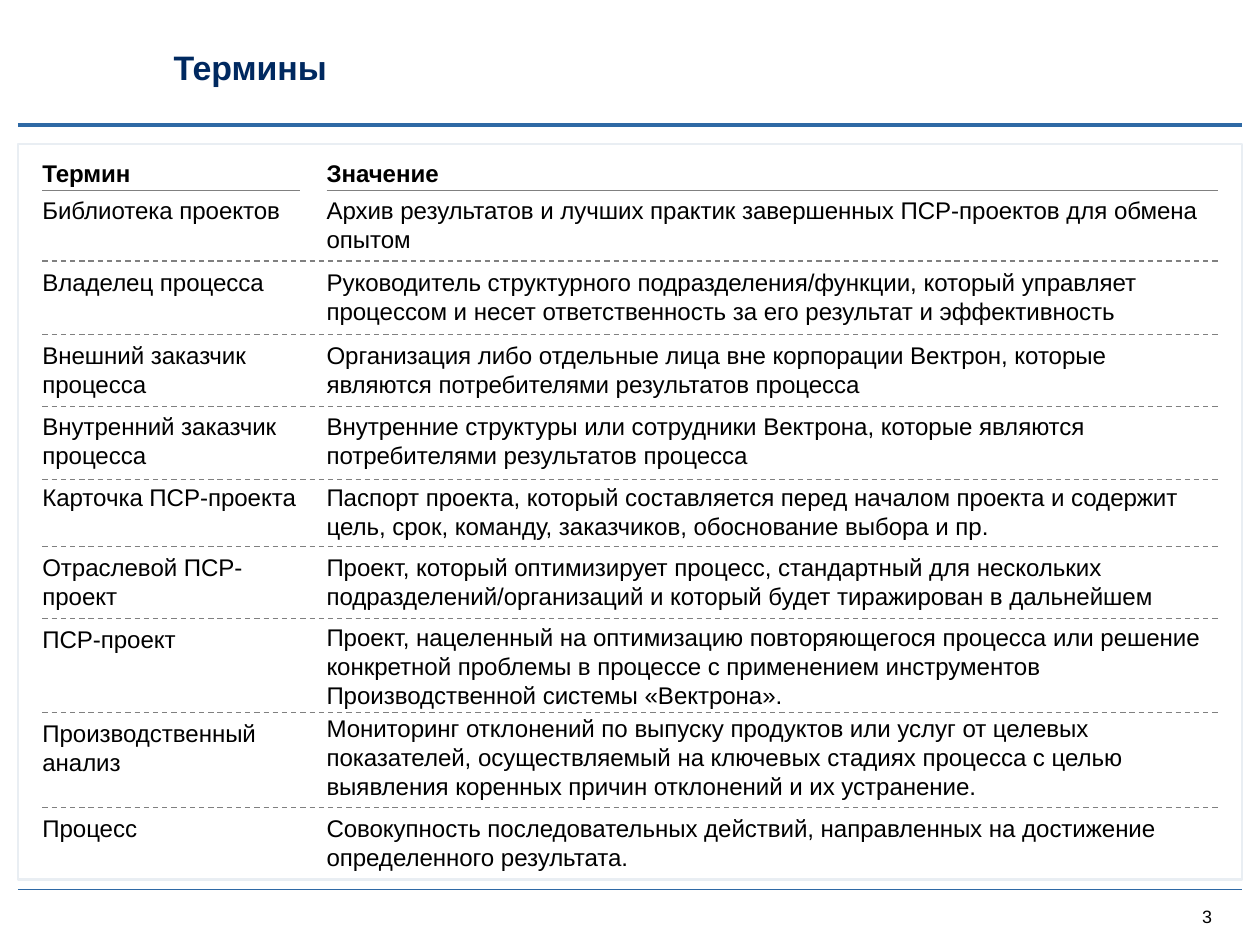
import dataclasses
import typing

import pptx
import pptx.dml.color
import pptx.enum.dml
import pptx.enum.shapes
import pptx.enum.text
import pptx.oxml
import pptx.oxml.ns
import pptx.util

Inches = pptx.util.Inches
Anchor = pptx.enum.text.MSO_ANCHOR


@dataclasses.dataclass(frozen=True)
class Theme:
    font: str = "Arial"
    title: str = "002960"
    text: str = "000000"
    accent: str = "2E69A5"
    frame: str = "E9EEF3"
    rule: str = "808080"
    title_size: float = 19
    body_size: float = 13.5
    number_size: float = 10
    thin: float = 0.75
    medium: float = 1.5
    thick: float = 2.25


class Row(typing.NamedTuple):
    """A glossary entry; the pads are the gaps in inches above its two texts."""
    height: float
    term: str
    meaning: str
    term_pad: float = 0.05
    meaning_pad: float = 0.05


THEME = Theme()
WIDTH, HEIGHT = 9.8, 7.35
MARGIN = 0.14
RIGHT = WIDTH - MARGIN
TERM_LEFT, TERM_WIDTH = 0.33, 2.0
MEANING_LEFT, MEANING_WIDTH = 2.54, 6.93
TABLE_RIGHT = MEANING_LEFT + MEANING_WIDTH
HEADER_TOP, HEADER_HEIGHT = 1.22, 0.26

COLUMNS = [("Термин", TERM_LEFT, TERM_WIDTH), ("Значение", MEANING_LEFT, MEANING_WIDTH)]
ROWS = [
    Row(0.55, "Библиотека проектов",
        "Архив результатов и лучших практик завершенных ПСР-проектов для обмена опытом",
        0.04, 0.04),
    Row(0.57, "Владелец процесса",
        "Руководитель структурного подразделения/функции, который управляет процессом "
        "и несет ответственность за его результат и эффективность"),
    Row(0.56, "Внешний заказчик процесса",
        "Организация либо отдельные лица вне корпорации Вектрон, которые являются "
        "потребителями результатов процесса"),
    Row(0.57, "Внутренний заказчик процесса",
        "Внутренние структуры или сотрудники Вектрона, которые являются "
        "потребителями результатов процесса", 0.04, 0.04),
    Row(0.52, "Карточка ПСР-проекта",
        "Паспорт проекта, который составляется перед началом проекта и содержит "
        "цель, срок, команду, заказчиков, обоснование выбора и пр.", 0.02, 0.02),
    Row(0.56, "Отраслевой ПСР-проект",
        "Проект, который оптимизирует процесс, стандартный для нескольких "
        "подразделений/организаций и который будет тиражирован в дальнейшем"),
    Row(0.73, "ПСР-проект",
        "Проект, нацеленный на оптимизацию повторяющегося процесса или решение "
        "конкретной проблемы в процессе с применением инструментов "
        "Производственной системы «Вектрона».", 0.05, 0.03),
    Row(0.74, "Производственный анализ",
        "Мониторинг отклонений по выпуску продуктов или услуг от целевых "
        "показателей, осуществляемый на ключевых стадиях процесса с целью "
        "выявления коренных причин отклонений и их устранение.", 0.05, 0.01),
    Row(0.56, "Процесс",
        "Совокупность последовательных действий, направленных на достижение "
        "определенного результата."),
]


def rgb(color):
    return pptx.dml.color.RGBColor.from_string(color)


def add_text(slide, text, left, top, width, height, size=THEME.body_size,
             color=THEME.text, bold=False, anchor=Anchor.TOP, bottom=0, wrap=True):
    tf = slide.shapes.add_textbox(*map(Inches, (left, top, width, height))).text_frame
    tf.margin_left = tf.margin_right = tf.margin_top = 0
    tf.margin_bottom = Inches(bottom)
    tf.word_wrap = wrap
    tf.vertical_anchor = anchor
    tf.text = text
    font = tf.paragraphs[0].runs[0].font
    font.name, font.size, font.bold = THEME.font, pptx.util.Pt(size), bold
    font.color.rgb = rgb(color)


def add_rule(slide, left, right, y, color=THEME.rule, weight=THEME.thin, dashed=False):
    """Draw a horizontal line."""
    sp = slide.shapes.add_connector(
        pptx.enum.shapes.MSO_CONNECTOR.STRAIGHT, *map(Inches, (left, y, right, y)))
    sp.line.color.rgb = rgb(color)
    sp.line.width = pptx.util.Pt(weight)
    if dashed:
        sp.line.dash_style = pptx.enum.dml.MSO_LINE.DASH
    effects = pptx.oxml.ns.qn("a:effectLst")
    sp.line._get_or_add_ln().addnext(sp._element.makeelement(effects, {}))


def add_frame(slide, left, top, width, height):
    sp = slide.shapes.add_shape(
        pptx.enum.shapes.MSO_SHAPE.RECTANGLE, *map(Inches, (left, top, width, height)))
    sp.shadow.inherit = False
    sp.fill.background()
    sp.line.color.rgb = rgb(THEME.frame)
    sp.line.width = pptx.util.Pt(THEME.medium)


def add_glossary(slide):
    y = HEADER_TOP + HEADER_HEIGHT
    for name, left, width in COLUMNS:
        add_rule(slide, left, left + width, y)
        add_text(slide, name, left, HEADER_TOP, width, HEADER_HEIGHT,
                 bold=True, anchor=Anchor.BOTTOM, bottom=0.02)
    for i, row in enumerate(ROWS):
        if i:
            add_rule(slide, TERM_LEFT, TABLE_RIGHT, y, dashed=True)
        cells = zip(COLUMNS, (row.term, row.meaning), (row.term_pad, row.meaning_pad))
        for (_, left, width), text, pad in cells:
            add_text(slide, text, left, y + pad, width, row.height - pad)
        y += row.height


def main():
    prs = pptx.Presentation()
    prs.slide_width, prs.slide_height = Inches(WIDTH), Inches(HEIGHT)
    slide = prs.slides.add_slide(prs.slide_layouts[6])
    add_rule(slide, MARGIN, RIGHT, 6.92, THEME.accent)
    add_rule(slide, MARGIN, RIGHT, 0.97, THEME.accent, THEME.thick)
    add_text(slide, "3", 9.35, 7.04, 0.23, 0.17, THEME.number_size,
             anchor=Anchor.MIDDLE, wrap=True)
    add_text(slide, "Термины", 1.35, 0.36, 7.31, 0.32, THEME.title_size,
             THEME.title, bold=True, anchor=Anchor.MIDDLE)
    add_frame(slide, MARGIN, 1.12, RIGHT - MARGIN, 5.72)
    add_glossary(slide)
    prs.save("out.pptx")


if __name__ == "__main__":
    main()
